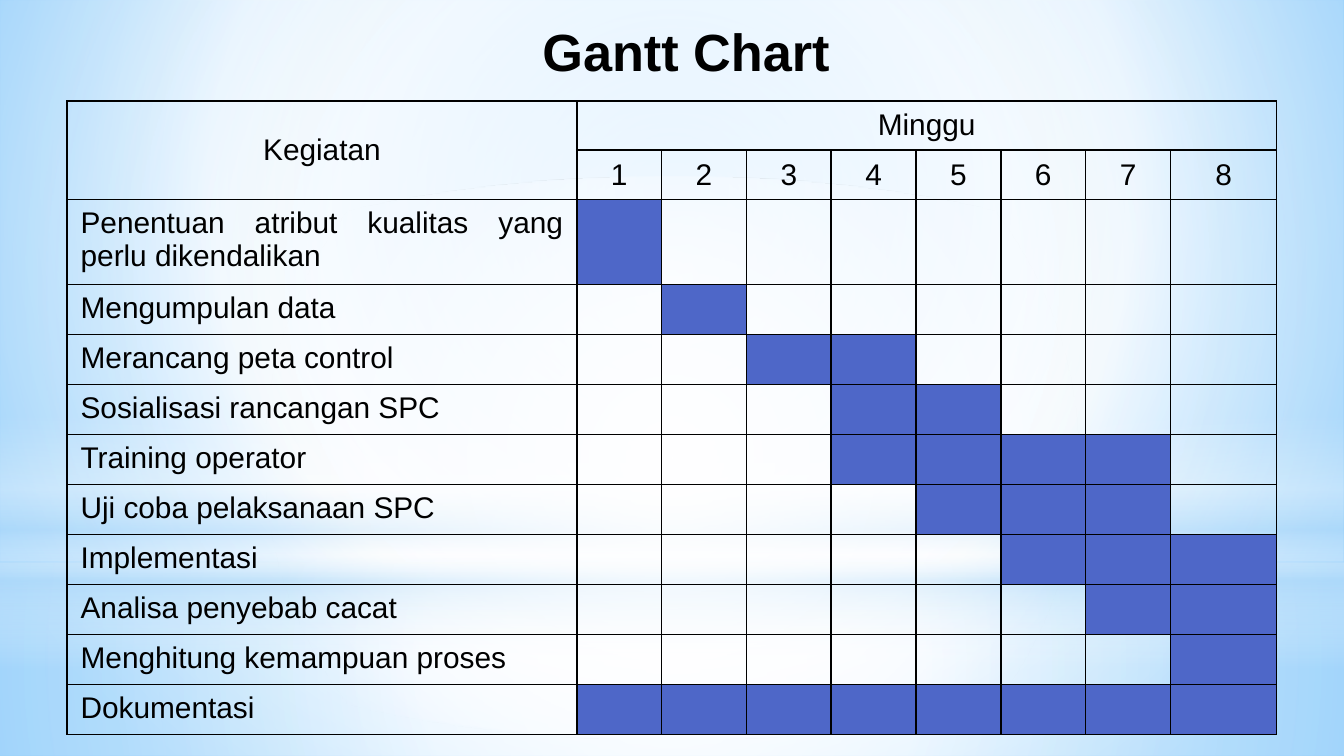
from lxml.etree import SubElement
from pptx import Presentation
from pptx.dml.color import RGBColor
from pptx.enum.shapes import MSO_SHAPE as Shape
from pptx.enum.text import MSO_ANCHOR as Anchor, PP_ALIGN as Align
from pptx.oxml.ns import qn
from pptx.util import Pt

# Content
TITLE = "Gantt Chart"
ACTIVITY_HEADING, WEEK_HEADING = "Kegiatan", "Minggu"
WEEKS = 8
ACTIVITIES = [  # activity, first week, last week
    ("Penentuan atribut kualitas yang perlu dikendalikan", 1, 1),
    ("Mengumpulan data", 2, 2),
    ("Merancang peta control", 3, 4),
    ("Sosialisasi rancangan SPC", 4, 5),
    ("Training operator", 4, 7),
    ("Uji coba pelaksanaan SPC", 5, 7),
    ("Implementasi", 6, 8),
    ("Analisa penyebab cacat", 7, 8),
    ("Menghitung kemampuan proses", 8, 8),
    ("Dokumentasi", 1, 8),
]

# Format
COLORS = {"ink": "000000", "bar": "4E67C8", "white": "FFFFFF", "haze": "B4DCFA",
          "sky": "9ED5FF", "deep": "5BB9FF"}
TITLE_FONT = {"name": "Arial", "size": Pt(28), "bold": True}
TABLE_FONT = {"name": "Arial", "size": Pt(16)}
SLIDE_W, SLIDE_H = 720, 405
TABLE_LEFT, TABLE_TOP, TABLE_W = 36, 54, 648
ACTIVITY_W, WEEK_W = 273, 45.45
ROW_H, TALL_ROW_H = 26.45, 45.5
TALL_ROW = 2

# Gradients: stops are (position %, colour, opacity %)
CENTER = (50, 50, 50, 50)
BACKDROP = [(0, "sky", 100), (60, "white", 100), (100, "deep", 100)]
GLOWS = [  # shape, top, height, stops, centre rectangle or None for vertical
    (Shape.RECTANGLE, 301.5, 103.5,
     [(0, "white", 91), (37, "white", 76), (100, "haze", 79)], CENTER),
    (Shape.RECTANGLE, 0, 301.5,
     [(0, "white", 89), (48, "white", 62), (100, "haze", 79)], CENTER),
    (Shape.RECTANGLE, 222.5, 135,
     [(0, "white", 0), (29, "white", 30), (45, "haze", 40), (55, "white", 26),
      (65, "haze", 60), (100, "white", 0)], None),
    (Shape.OVAL, 94.5, 301.5, [(0, "white", 100), (56, "white", 0)], CENTER),
]


def add(parent, tag, **attributes):
    values = {key: str(value) for key, value in attributes.items()}
    return SubElement(parent, qn(tag), values)


def set_gradient(holder, stops, center):
    """Turn the solid fill inside holder into a gradient."""
    fill = holder.find(qn("a:solidFill"))
    fill.clear()
    fill.tag = qn("a:gradFill")
    fill.set("rotWithShape", "1")
    stop_list = add(fill, "a:gsLst")
    for position, color, opacity in stops:
        stop = add(stop_list, "a:gs", pos=position * 1000)
        rgb = add(stop, "a:srgbClr", val=COLORS[color])
        if opacity < 100:
            add(rgb, "a:alpha", val=opacity * 1000)
    if center:
        focus = add(fill, "a:path", path="circle")
        add(focus, "a:fillToRect",
            **{side: value * 1000 for side, value in zip("ltrb", center)})
    else:
        add(fill, "a:lin", ang=90 * 60000, scaled=0)


def write(paragraph, text, font_format, align):
    paragraph.alignment = align
    run = paragraph.add_run()
    run.text = text
    for key, value in font_format.items():
        setattr(run.font, key, value)
    run.font.color.rgb = RGBColor.from_string(COLORS["ink"])


def set_borders(cell):
    properties = cell._tc.get_or_add_tcPr()
    for tag in ("a:lnL", "a:lnR", "a:lnT", "a:lnB"):
        border = add(properties, tag, w=Pt(1))
        add(add(border, "a:solidFill"), "a:srgbClr", val=COLORS["ink"])


prs = Presentation()
prs.slide_width, prs.slide_height = Pt(SLIDE_W), Pt(SLIDE_H)
slide = prs.slides.add_slide(prs.slide_layouts[6])

# Background and soft glows
slide.background.fill.solid()
set_gradient(next(slide.element.iter(qn("p:bgPr"))), BACKDROP, (20, 10, 20, 60))
for outline, top, height, stops, center in GLOWS:
    glow = slide.shapes.add_shape(outline, 0, Pt(top), Pt(SLIDE_W), Pt(height))
    glow.shadow.inherit = False
    glow.line.fill.background()
    glow.fill.solid()
    set_gradient(glow.element.spPr, stops, center)

# Table grid
row_heights = [ROW_H] * (len(ACTIVITIES) + 2)
row_heights[TALL_ROW] = TALL_ROW_H
column_widths = [ACTIVITY_W] + [WEEK_W] * (WEEKS - 1)
column_widths.append(TABLE_W - sum(column_widths))
schedule = slide.shapes.add_table(
    len(row_heights), len(column_widths), Pt(TABLE_LEFT), Pt(TABLE_TOP),
    Pt(TABLE_W), Pt(sum(row_heights))).table
schedule.first_row = schedule.horz_banding = False
for row, height in zip(schedule.rows, row_heights):
    row.height = Pt(height)
for column, width in zip(schedule.columns, column_widths):
    column.width = Pt(width)
for cell in schedule.iter_cells():
    set_borders(cell)
    cell.fill.background()

# Headings
schedule.cell(0, 0).merge(schedule.cell(1, 0))
schedule.cell(0, 1).merge(schedule.cell(0, WEEKS))
headings = [(0, 0, ACTIVITY_HEADING), (0, 1, WEEK_HEADING)]
headings += [(1, week, str(week)) for week in range(1, WEEKS + 1)]
for row, column, text in headings:
    cell = schedule.cell(row, column)
    cell.vertical_anchor = Anchor.MIDDLE
    write(cell.text_frame.paragraphs[0], text, TABLE_FONT, Align.CENTER)

# Activities and their bars
for row, (activity, first, last) in enumerate(ACTIVITIES, start=2):
    name_cell = schedule.cell(row, 0)
    write(name_cell.text_frame.paragraphs[0], activity, TABLE_FONT, Align.JUSTIFY)
    for week in range(first, last + 1):
        bar = schedule.cell(row, week).fill
        bar.solid()
        bar.fore_color.rgb = RGBColor.from_string(COLORS["bar"])

# Empty cells keep the table's text size, so that rows do not grow
for cell in schedule.iter_cells():
    if not cell.text_frame.text:
        add(cell.text_frame.paragraphs[0]._p, "a:endParaRPr",
            sz=int(TABLE_FONT["size"].pt * 100))

# Title
title = slide.shapes.add_textbox(Pt(49), Pt(6.5), Pt(637), Pt(38)).text_frame
title.word_wrap = True
write(title.paragraphs[0], TITLE, TITLE_FONT, Align.CENTER)

prs.save("out.pptx")
